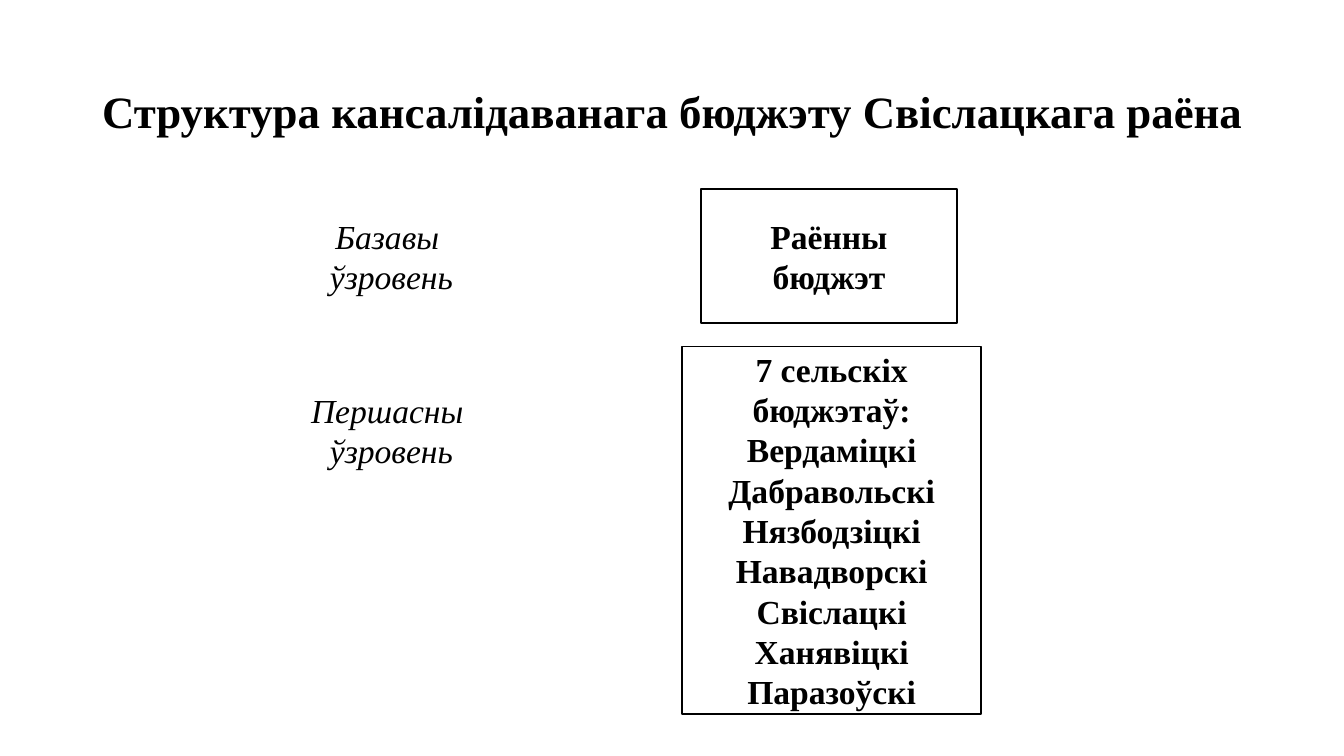
"""Build the slide on the structure of the district's consolidated budget."""
from pptx import Presentation
from pptx.dml.color import RGBColor
from pptx.enum.shapes import MSO_SHAPE
from pptx.enum.text import MSO_ANCHOR, PP_ALIGN
from pptx.util import Pt

TABLES = [
    ((8.64, 128.9, 702.72, 73.4), []),
    ((8.64, 10, 702.72, 154), ["Структура кансалідаванага бюджэту Свіслацкага раёна"]),
]
TABLE_MARGINS = {"margin_left": 0.7, "margin_right": 0.7, "margin_top": 0.7, "margin_bottom": 53}
BUDGETS = [
    ((375.6, 101.1, 137, 72), ["Раённы бюджэт"]),
    ((365.6, 185.6, 160, 196.8), [
        "7 сельскіх бюджэтаў:", "Вердаміцкі", "Дабравольскі", "Нязбодзіцкі",
        "Навадворскі", "Свіслацкі", "Ханявіцкі", "Паразоўскі",
    ]),
]
LEVELS = [
    ((150.5, 101.1, 118.5, 72), ["Базавы ", "ўзровень"]),
    ((150.5, 194.6, 118.5, 72), ["Першасны ", "ўзровень"]),
]
TITLE_FORMAT = {"size": Pt(24), "bold": True}
BUDGET_FORMAT = {"size": Pt(18), "bold": True}
LEVEL_FORMAT = {"size": Pt(18), "bold": False, "italic": True}


def color(value):
    return RGBColor.from_string(value)


def write(text_frame, lines, font_format):
    text_frame.word_wrap = True
    for index, line in enumerate(lines):
        paragraph = text_frame.paragraphs[0] if index == 0 else text_frame.add_paragraph()
        paragraph.alignment = PP_ALIGN.CENTER
        run = paragraph.add_run()
        run.text = line
        for name, value in {"name": "Times New Roman", **font_format}.items():
            setattr(run.font, name, value)
        run.font.color.rgb = color("000000")


def add_single_cell_table(slide, frame, lines):
    table = slide.shapes.add_table(1, 1, *map(Pt, frame)).table
    table.first_row = table.horz_banding = False
    cell = table.cell(0, 0)
    cell.fill.background()
    cell.vertical_anchor = MSO_ANCHOR.MIDDLE
    for name, value in TABLE_MARGINS.items():
        setattr(cell, name, Pt(value))
    write(cell.text_frame, lines, TITLE_FORMAT)


def add_box(slide, frame, lines, font_format, outlined):
    shape = slide.shapes.add_shape(MSO_SHAPE.RECTANGLE, *map(Pt, frame))
    shape.shadow.inherit = False
    shape.fill.solid()
    shape.fill.fore_color.rgb = color("FFFFFF")
    if outlined:
        shape.line.color.rgb = color("000000")
        shape.line.width = Pt(1)
    else:
        shape.line.fill.background()
    shape.text_frame.vertical_anchor = MSO_ANCHOR.MIDDLE
    write(shape.text_frame, lines, font_format)


def main():
    presentation = Presentation()
    presentation.slide_width, presentation.slide_height = Pt(720), Pt(405)
    slide = presentation.slides.add_slide(presentation.slide_layouts[6])
    for frame, lines in TABLES:
        add_single_cell_table(slide, frame, lines)
    for boxes, font_format, outlined in (
        (BUDGETS, BUDGET_FORMAT, True),
        (LEVELS, LEVEL_FORMAT, False),
    ):
        for frame, lines in boxes:
            add_box(slide, frame, lines, font_format, outlined)
    presentation.save("out.pptx")


if __name__ == "__main__":
    main()
